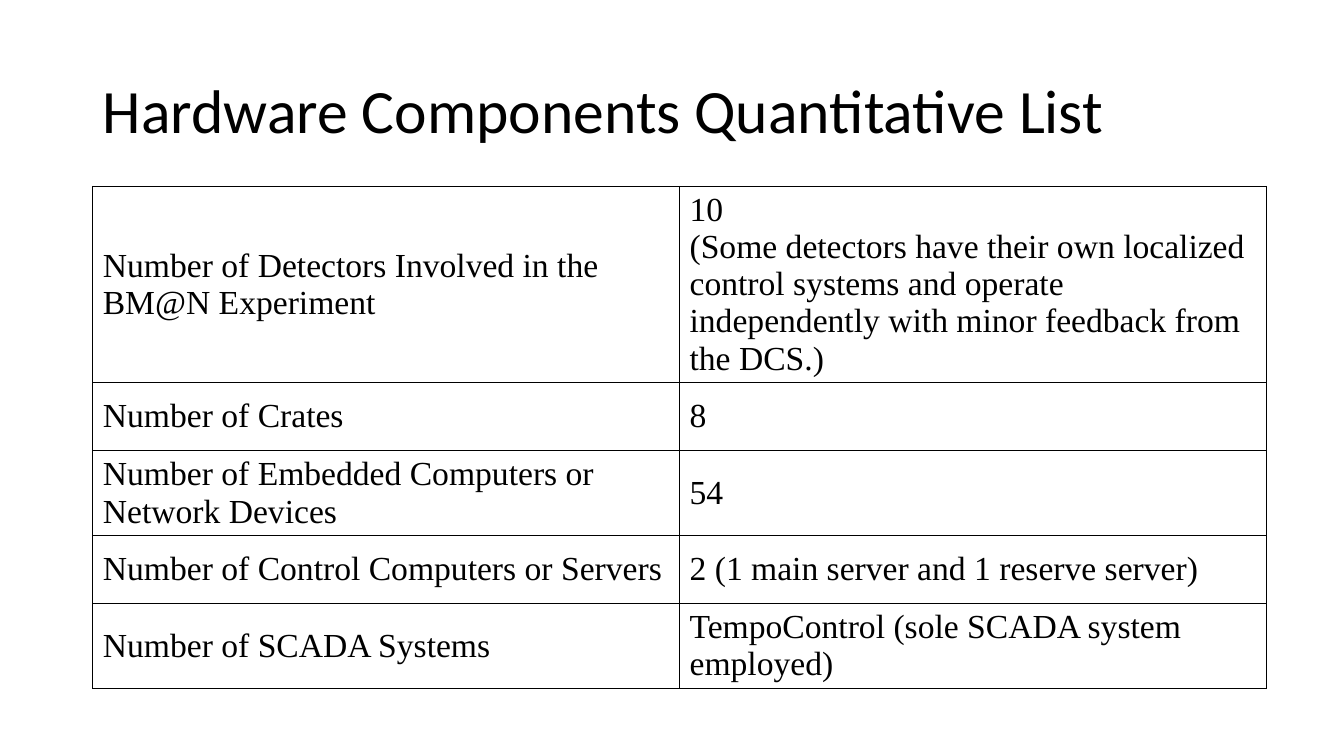
from lxml import etree
from pptx import Presentation
from pptx import util as u
from pptx.dml.color import RGBColor
from pptx.enum import text
from pptx.oxml import ns

COLORS = {"ink": "000000", "paper": "FFFFFF"}
COMPONENTS = [
    ("Number of Detectors Involved in the BM@N Experiment",
     "10\n(Some detectors have their own localized control systems and operate "
     "independently with minor feedback from the DCS.)"),
    ("Number of Crates", "8"),
    ("Number of Embedded Computers or Network Devices", "54"),
    ("Number of Control Computers or Servers", "2 (1 main server and 1 reserve server)"),
    ("Number of SCADA Systems", "TempoControl (sole SCADA system employed)"),
]


def write_text(frame, content, *, font, size, color="ink", spacing=1.0):
    """Fill a text frame with one left-aligned, formatted paragraph."""
    frame.word_wrap = True
    paragraph = frame.paragraphs[0]
    paragraph.text = content
    paragraph.alignment = text.PP_ALIGN.LEFT
    paragraph.line_spacing = spacing
    for run in paragraph.runs:
        run.font.name = font
        run.font.size = u.Pt(size)
        run.font.color.rgb = RGBColor.from_string(COLORS[color])


def add_borders(cell, color="ink", points=1):
    """Draw a solid line on all four sides of a table cell."""
    properties = cell._tc.get_or_add_tcPr()
    for index, side in enumerate(("a:lnL", "a:lnR", "a:lnT", "a:lnB")):
        line = etree.Element(ns.qn(side), w=str(u.Pt(points)))
        fill = etree.SubElement(line, ns.qn("a:solidFill"))
        etree.SubElement(fill, ns.qn("a:srgbClr"), val=COLORS[color])
        properties.insert(index, line)


def add_title(slide, content, left, top, width, height):
    """Place the title placeholder in the given box."""
    title = slide.shapes.title
    title.left, title.top = u.Inches(left), u.Inches(top)
    title.width, title.height = u.Inches(width), u.Inches(height)
    frame = title.text_frame
    frame.auto_size = text.MSO_AUTO_SIZE.NONE
    frame.vertical_anchor = text.MSO_ANCHOR.MIDDLE
    write_text(frame, content, font="Calibri", size=44, spacing=0.9)


def add_component_table(slide, records, left, top, width, first_height, row_height):
    """Place a bordered table with equal columns and a taller first row."""
    columns = len(records[0])
    height = first_height + row_height * (len(records) - 1)
    table = slide.shapes.add_table(
        len(records), columns, u.Inches(left), u.Inches(top),
        u.Inches(width), u.Inches(height)).table
    table.first_row = table.horz_banding = False
    for column in table.columns:
        column.width = u.Inches(width / columns)
    for index, record in enumerate(records):
        table.rows[index].height = u.Inches(row_height if index else first_height)
        for position, content in enumerate(record):
            cell = table.cell(index, position)
            cell.vertical_anchor = text.MSO_ANCHOR.MIDDLE
            cell.fill.solid()
            cell.fill.fore_color.rgb = RGBColor.from_string(COLORS["paper"])
            write_text(cell.text_frame, content, font="Times New Roman", size=24)
            add_borders(cell)


def main():
    """Build and save the hardware components slide."""
    presentation = Presentation()
    presentation.slide_width = u.Inches(13.33)
    presentation.slide_height = u.Inches(7.5)
    slide = presentation.slides.add_slide(presentation.slide_layouts.get_by_name("Title Only"))
    add_title(slide, "Hardware Components Quantitative List", 0.92, 0.4, 11.5, 1.45)
    add_component_table(slide, COMPONENTS, 0.92, 1.85, 11.64, 1.55, 0.68)
    presentation.save("out.pptx")


if __name__ == "__main__":
    main()
